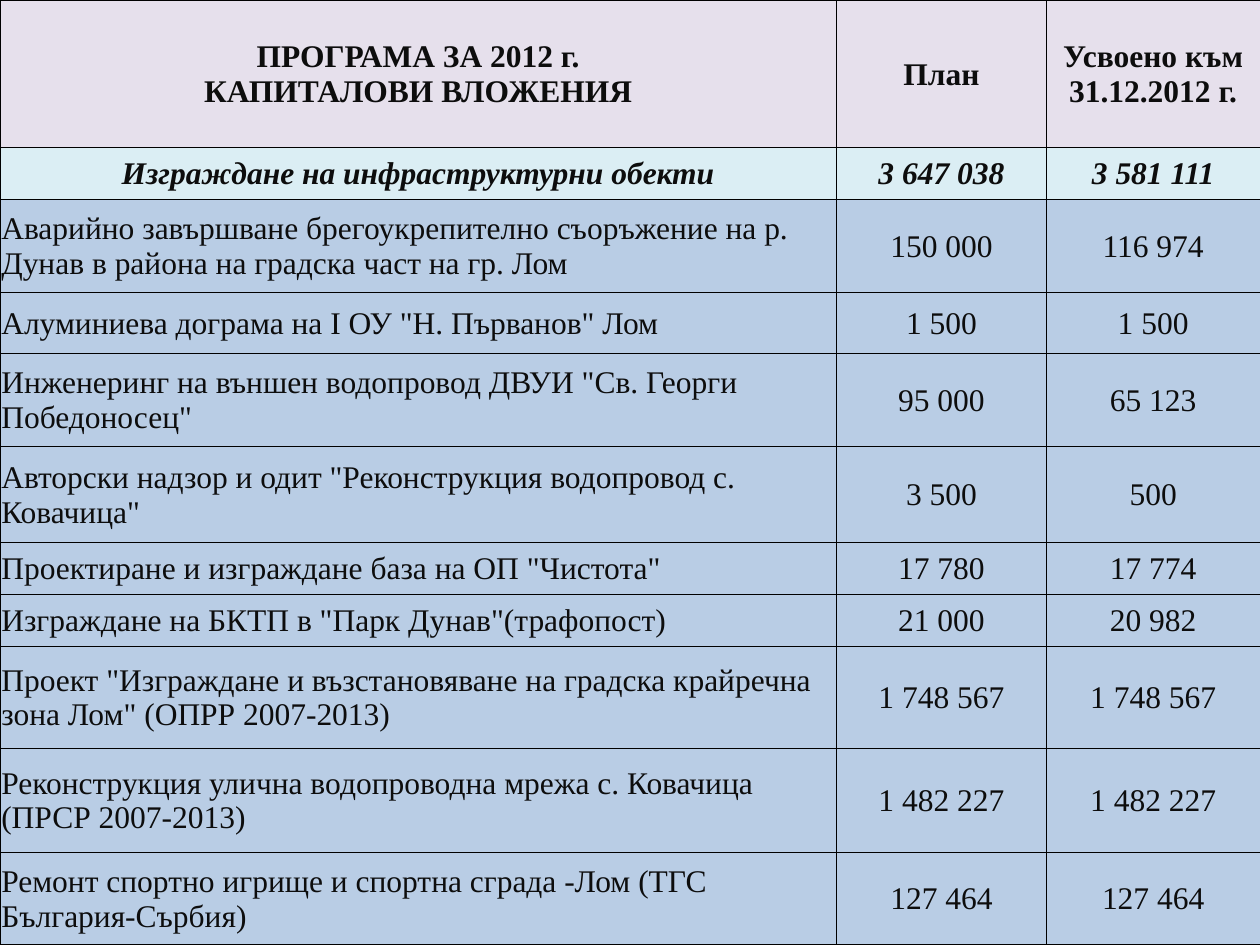
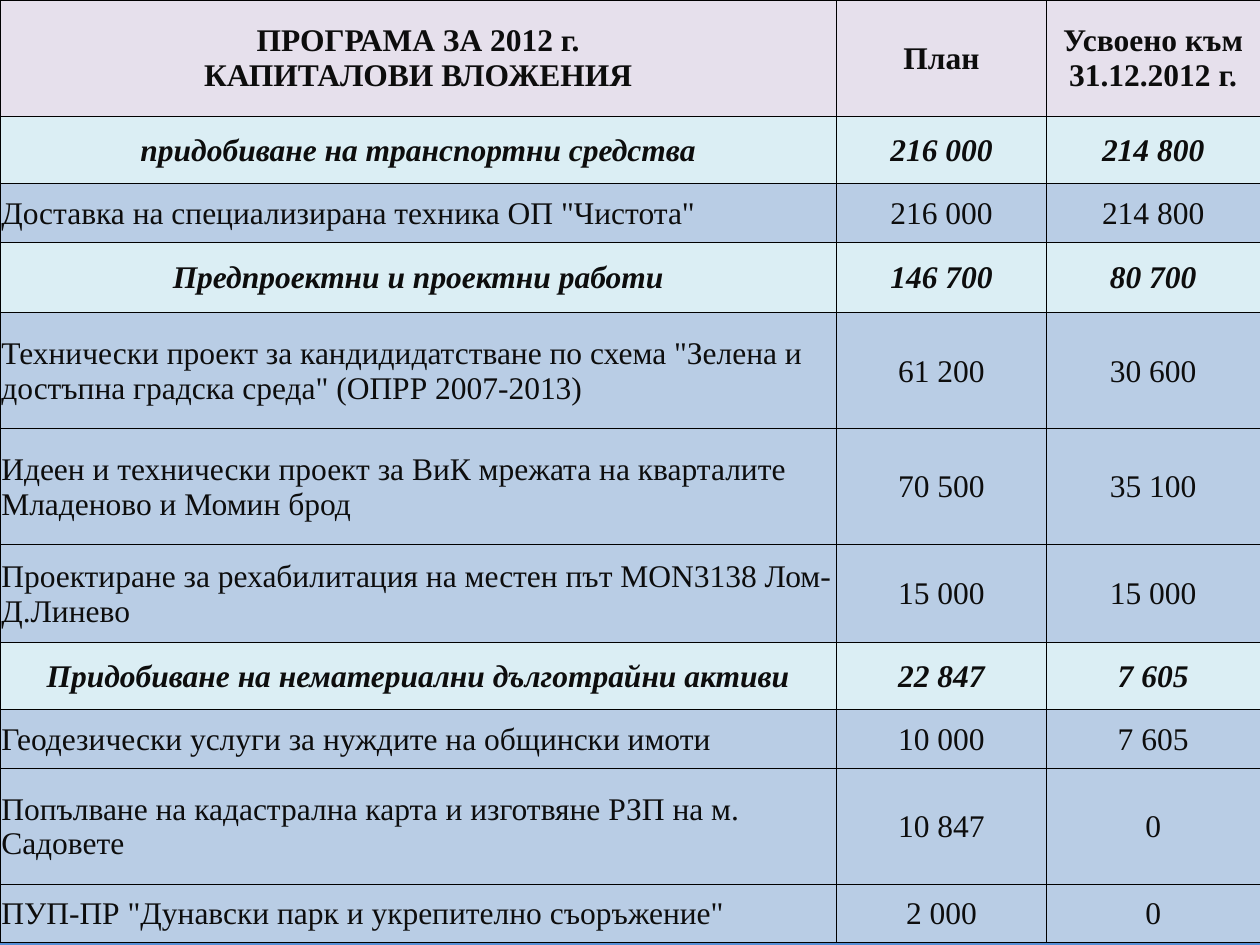
"""Builds the two table slides of the 2012 capital investment report."""
from dataclasses import dataclass

from lxml import etree
from pptx import Presentation
from pptx import util as u
from pptx.dml import color
from pptx.enum import text
from pptx.oxml import ns

HEADINGS = ("ПРОГРАМА ЗА 2012 г.\nКАПИТАЛОВИ ВЛОЖЕНИЯ", "План", "Усвоено към 31.12.2012 г.")

PROGRAMME_PAGES = [
    {"heading_height": 84.3, "rows": [
        ("group", 29.7, "Изграждане на инфраструктурни обекти", 3647038, 3581111),
        ("item", 52.9, "Аварийно завършване брегоукрепително съоръжение на р. Дунав "
                       "в района на градска част на гр. Лом", 150000, 116974),
        ("item", 35.3, 'Алуминиева дограма на I ОУ "Н. Първанов" Лом', 1500, 1500),
        ("item", 52.9, 'Инженеринг на външен водопровод ДВУИ "Св. Георги Победоносец"', 95000, 65123),
        ("item", 54.9, 'Авторски надзор и одит "Реконструкция водопровод с. Ковачица"', 3500, 500),
        ("item", 29.7, 'Проектиране и изграждане база на ОП "Чистота"', 17780, 17774),
        ("item", 29.7, 'Изграждане на БКТП в "Парк Дунав"(трафопост)', 21000, 20982),
        ("item", 58.3, 'Проект "Изграждане и възстановяване на градска крайречна зона Лом" '
                       "(ОПРР 2007-2013)", 1748567, 1748567),
        ("item", 59.4, "Реконструкция улична водопроводна мрежа с. Ковачица (ПРСР 2007-2013)",
         1482227, 1482227),
        ("item", 52.9, "Ремонт спортно игрище и спортна сграда -Лом (ТГС България-Сърбия)",
         127464, 127464),
    ]},
    {"heading_height": 66.3, "rows": [
        ("group", 38.8, "придобиване на транспортни средства", 216000, 214800),
        ("item", 33.4, 'Доставка на специализирана техника ОП "Чистота"', 216000, 214800),
        ("group", 40.3, "Предпроектни и проектни работи", 146700, 80700),
        ("item", 66.3, 'Технически проект за кандидидатстване по схема "Зелена и достъпна '
                       'градска среда" (ОПРР 2007-2013)', 61200, 30600),
        ("item", 66, "Идеен и технически проект за ВиК мрежата на кварталите Младеново и Момин брод",
         70500, 35100),
        ("item", 56.3, "Проектиране за рехабилитация на местен път MON3138 Лом-Д.Линево", 15000, 15000),
        ("group", 38.3, "Придобиване на нематериални дълготрайни активи", 22847, 7605),
        ("item", 33.4, "Геодезически услуги за нуждите на общински имоти", 10000, 7605),
        ("item", 66.3, "Попълване на кадастрална карта и изготвяне РЗП на м. Садовете", 10847, 0),
        ("item", 33.2, 'ПУП-ПР "Дунавски парк и укрепително съоръжение"', 2000, 0),
    ]},
]


@dataclass(frozen=True)
class Theme:
    font: str = "Times New Roman"
    size: float = 18
    ink: str = "0D0D0D"
    border: str = "000000"
    border_width: float = 0.5
    inset: float = 0.75
    heading: str = "E6E0EC"
    group: str = "DBEEF4"
    item: str = "B9CDE5"
    backdrop: tuple = ((9, "558ED5"), (47, "D4DEFF"), (76, "D4DEFF"), (93, "96AB94"))


THEME = Theme()
SLIDE_WIDTH, SLIDE_HEIGHT = 720, 540
COLUMN_WIDTHS = (478, 120, 122)
ROW_FORMATS = {
    "heading": {"fill": THEME.heading, "bold": True},
    "group": {"fill": THEME.group, "bold": True, "italic": True},
    "item": {"fill": THEME.item},
}


def add_color(parent, rgb):
    etree.SubElement(parent, ns.qn("a:srgbClr"), val=rgb)


def paint_backdrop(master):
    fill = master.background.fill
    fill.gradient()
    fill.gradient_angle = 90
    stops = master.element.find(".//" + ns.qn("p:bg")).find(".//" + ns.qn("a:gsLst"))
    for stop in list(stops):
        stops.remove(stop)
    for percent, rgb in THEME.backdrop:
        add_color(etree.SubElement(stops, ns.qn("a:gs"), pos=str(percent * 1000)), rgb)


def draw_borders(cell):
    properties = cell._tc.get_or_add_tcPr()
    for position, side in enumerate(("lnL", "lnR", "lnT", "lnB")):
        line = etree.Element(ns.qn("a:" + side), w=str(u.Pt(THEME.border_width)))
        add_color(etree.SubElement(line, ns.qn("a:solidFill")), THEME.border)
        properties.insert(position, line)


def write_cell(cell, wording, *, fill, bold=False, italic=False, centered=True):
    cell.margin_left = cell.margin_right = cell.margin_top = u.Pt(THEME.inset)
    cell.margin_bottom = 0
    cell.vertical_anchor = text.MSO_ANCHOR.MIDDLE
    cell.fill.solid()
    cell.fill.fore_color.rgb = color.RGBColor.from_string(fill)
    draw_borders(cell)
    cell.text_frame.text = wording
    for paragraph in cell.text_frame.paragraphs:
        paragraph.alignment = text.PP_ALIGN.CENTER if centered else text.PP_ALIGN.LEFT
        for run in paragraph.runs:
            run.font.name = THEME.font
            run.font.size = u.Pt(THEME.size)
            run.font.bold = bold
            run.font.italic = italic
            run.font.color.rgb = color.RGBColor.from_string(THEME.ink)


def spaced(amount):
    return f"{amount:,}".replace(",", " ")


def add_programme(slide, page):
    rows = [("heading", page["heading_height"], HEADINGS)]
    rows += [(kind, height, (name, spaced(plan), spaced(spent)))
             for kind, height, name, plan, spent in page["rows"]]
    total_height = sum(height for _, height, _ in rows)
    programme = slide.shapes.add_table(len(rows), len(COLUMN_WIDTHS), 0, 0,
                                       u.Pt(SLIDE_WIDTH), u.Pt(total_height)).table
    programme.first_row = programme.horz_banding = False
    for column, width in zip(programme.columns, COLUMN_WIDTHS):
        column.width = u.Pt(width)
    for row, (kind, height, wordings) in zip(programme.rows, rows):
        row.height = u.Pt(height)
        for index, (cell, wording) in enumerate(zip(row.cells, wordings)):
            write_cell(cell, wording, centered=kind != "item" or index > 0, **ROW_FORMATS[kind])


def main():
    report = Presentation()
    report.slide_width, report.slide_height = u.Pt(SLIDE_WIDTH), u.Pt(SLIDE_HEIGHT)
    paint_backdrop(report.slide_master)
    for page in PROGRAMME_PAGES:
        add_programme(report.slides.add_slide(report.slide_layouts[6]), page)
    report.save("out.pptx")


if __name__ == "__main__":
    main()
